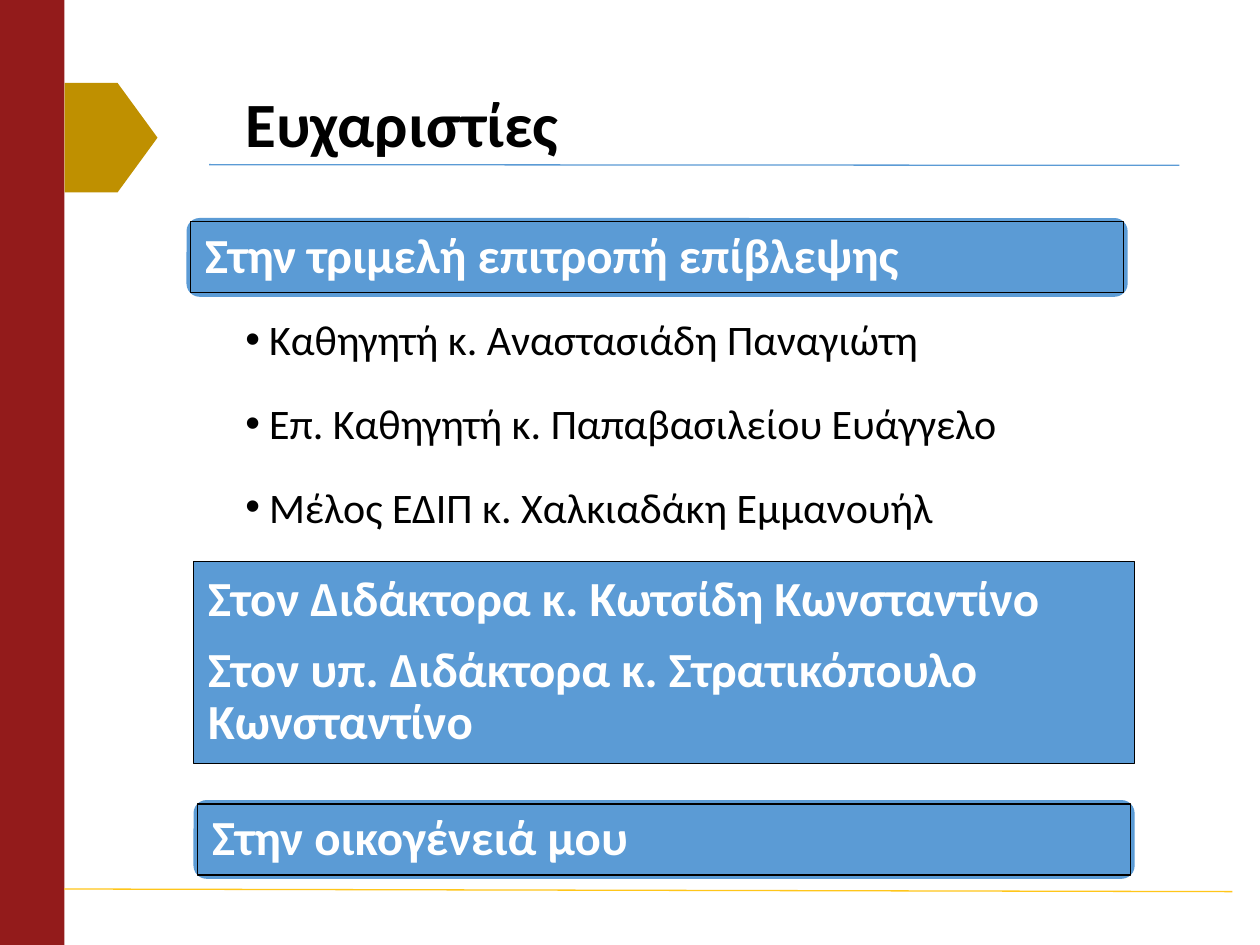
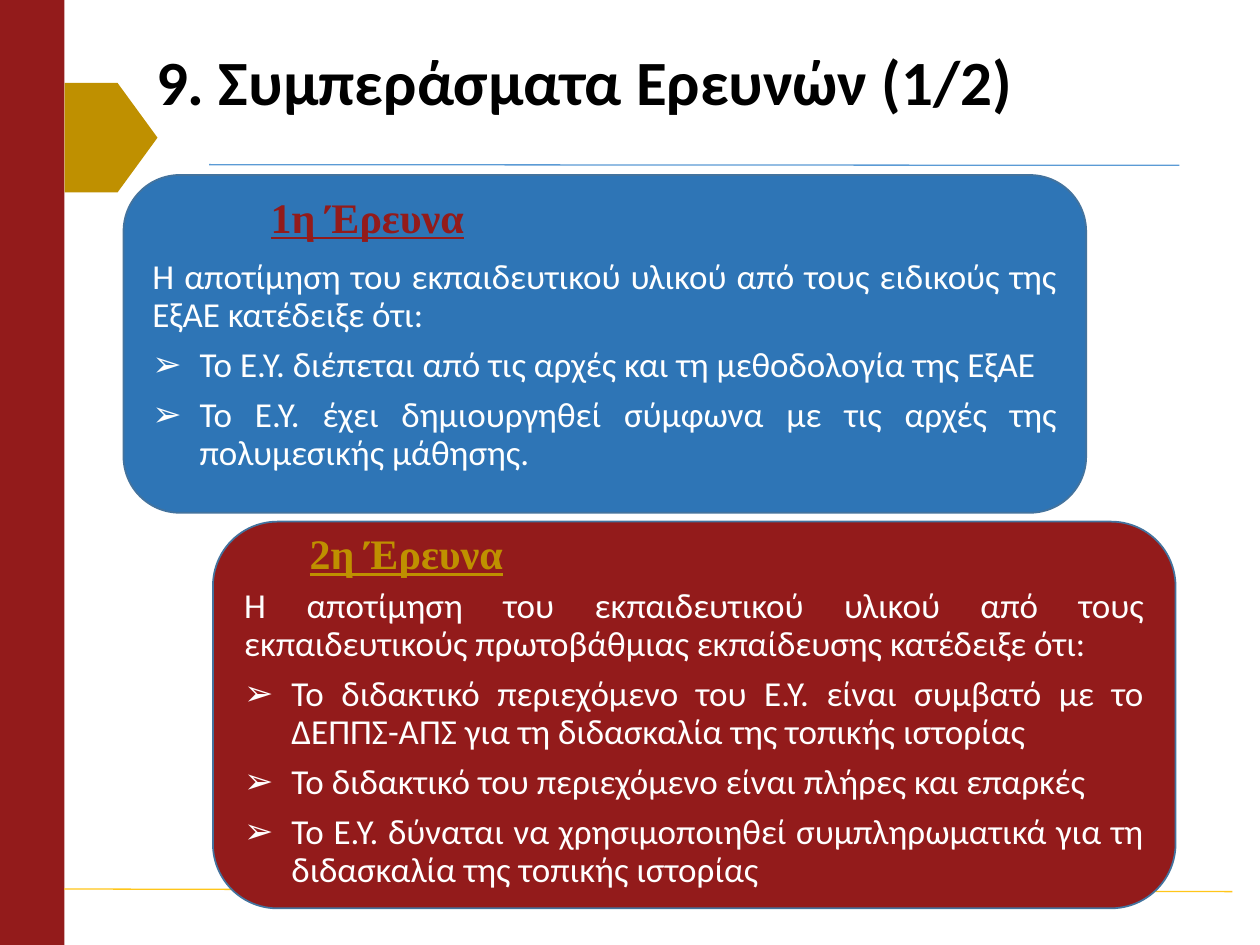
"""Build the acknowledgements slide and the research conclusions slide."""
import lxml.etree
import pptx
import pptx.dml.color
import pptx.enum.shapes
import pptx.enum.text
import pptx.oxml.ns
import pptx.util

Pt = pptx.util.Pt
rgb = pptx.dml.color.RGBColor.from_string
ALIGN = pptx.enum.text.PP_ALIGN
ANCHOR = pptx.enum.text.MSO_ANCHOR
SHAPE = pptx.enum.shapes.MSO_SHAPE
STRAIGHT = pptx.enum.shapes.MSO_CONNECTOR.STRAIGHT
qn = pptx.oxml.ns.qn

RED, GOLD, BLUE = "931B1B", "BF9000", "5B9BD5"
BLACK, WHITE = "000000", "FFFFFF"


def add_box(slide, kind, box, fill, line=None, line_width=0.75):
    shape = slide.shapes.add_shape(kind, *map(Pt, box))
    shape.shadow.inherit = False
    shape.fill.solid()
    shape.fill.fore_color.rgb = rgb(fill)
    if line:
        shape.line.color.rgb = rgb(line)
        shape.line.width = Pt(line_width)
    else:
        shape.line.fill.background()
    return shape


def add_text(shape, text, size, color=BLACK, font="Calibri", bold=False, underline=False,
             align=ALIGN.LEFT, anchor=ANCHOR.TOP, insets=(7.2, 3.6, 7.2, 3.6),
             spacing=0.9, before=0, after=0, bullet=None, indent=0, plain=0):
    frame = shape.text_frame
    frame.word_wrap = True
    frame.vertical_anchor = anchor
    frame.margin_left, frame.margin_top, frame.margin_right, frame.margin_bottom = map(Pt, insets)
    for index, line in enumerate(text.split("\n")):
        paragraph = frame.add_paragraph() if index else frame.paragraphs[0]
        paragraph.alignment = align
        paragraph.line_spacing = spacing
        paragraph.space_before = Pt(before)
        paragraph.space_after = Pt(after)
        run = paragraph.add_run()
        run.text = line
        run.font.name = font
        run.font.size = Pt(size)
        run.font.bold = bold
        run.font.underline = underline
        run.font.color.rgb = rgb(color)
        if bullet and index >= plain:
            properties = paragraph._p.get_or_add_pPr()
            properties.set("marL", str(Pt(indent)))
            properties.set("indent", str(-Pt(indent)))
            lxml.etree.SubElement(properties, qn("a:buFont")).set("typeface", "Arial")
            lxml.etree.SubElement(properties, qn("a:buChar")).set("char", bullet)


presentation = pptx.Presentation()
presentation.slide_width = Pt(720)
presentation.slide_height = Pt(540)

titles = [
    ("Ευχαριστίες", (133.2, 31.7, 554.4, 81.4)),
    ("9. Συμπεράσματα Ερευνών (1/2)", (82.1, 25.9, 612, 45.4)),
]
rules = [
    ((119.5, 94.1, 673.9, 94.5), BLUE),
    ((36.7, 508, 704.2, 509.5), "FFC61A"),
]

slides = []
for title, title_box in titles:
    slide = presentation.slides.add_slide(presentation.slide_layouts[6])
    add_box(slide, SHAPE.RECTANGLE, (0, 0, 36.9, 540), RED)
    for ends, color in rules:
        rule = slide.shapes.add_connector(STRAIGHT, *map(Pt, ends))
        rule.line.color.rgb = rgb(color)
        rule.line.width = Pt(0.75)
        lxml.etree.SubElement(rule._element.spPr, qn("a:effectLst"))
    pointer = add_box(slide, SHAPE.PENTAGON, (36.9, 47.4, 53.1, 62.6), GOLD)
    pointer.adjustments[0] = 0.43
    add_text(slide.shapes.add_textbox(*map(Pt, title_box)), title, 36, bold=True,
             anchor=ANCHOR.MIDDLE)
    slides.append(slide)
thanks, conclusions = slides

committee = thanks.shapes.add_textbox(*map(Pt, (133.2, 164.2, 521.3, 146.2)))
add_text(committee, "Καθηγητή κ. Αναστασιάδη Παναγιώτη\n"
         "Επ. Καθηγητή κ. Παπαβασιλείου Ευάγγελο\n"
         "Μέλος ΕΔΙΠ κ. Χαλκιαδάκη Εμμανουήλ",
         24, spacing=1.4, before=7.5, bullet="•", indent=13.5)

banners = [
    ("Στην τριμελή επιτροπή επίβλεψης", 106.6, 124.6, 45, True),
    ("Στον Διδάκτορα κ. Κωτσίδη Κωνσταντίνο\n"
     "Στον υπ. Διδάκτορα κ. Στρατικόπουλο Κωνσταντίνο", 110.6, 320.9, 115.4, False),
    ("Στην οικογένειά μου", 110.6, 457.2, 45, True),
]
for text, left, top, height, framed in banners:
    margin = 0
    if framed:
        add_box(thanks, SHAPE.ROUNDED_RECTANGLE, (left, top, 537.8, height), BLUE)
        margin = 2.2
    banner = add_box(thanks, SHAPE.RECTANGLE,
                     (left + margin, top + margin, 537.8 - 2 * margin, height - 2 * margin),
                     BLUE, BLACK)
    add_text(banner, text, 28, WHITE, bold=True, anchor=ANCHOR.MIDDLE,
             insets=(8.4, 8.4, 8.4, 8.4), after=9.8)

studies = [
    ("1η Έρευνα", RED, (93.6, 105.8, 232.6, 36),
     "Η αποτίμηση του εκπαιδευτικού υλικού από τους ειδικούς της ΕξΑΕ κατέδειξε ότι:\n"
     "Το Ε.Υ. διέπεται από τις αρχές και τη μεθοδολογία της ΕξΑΕ\n"
     "Το Ε.Υ. έχει δημιουργηθεί σύμφωνα με τις αρχές της πολυμεσικής μάθησης.",
     "2E75B6", (70.6, 100, 550.1, 193), 39),
    ("2η Έρευνα", GOLD, (115.9, 298.1, 232.6, 36),
     "Η αποτίμηση του εκπαιδευτικού υλικού από τους εκπαιδευτικούς πρωτοβάθμιας "
     "εκπαίδευσης κατέδειξε ότι:\n"
     "Το διδακτικό περιεχόμενο του Ε.Υ. είναι συμβατό με το ΔΕΠΠΣ-ΑΠΣ για τη διδασκαλία "
     "της τοπικής ιστορίας\n"
     "Το διδακτικό του περιεχόμενο είναι πλήρες και επαρκές\n"
     "Το Ε.Υ. δύναται να χρησιμοποιηθεί συμπληρωματικά για τη διδασκαλία της τοπικής ιστορίας",
     RED, (121.7, 298.1, 550.1, 221), 27.5),
]
for heading, heading_color, heading_box, findings, fill, card_box, top_inset in studies:
    card = add_box(conclusions, SHAPE.ROUNDED_RECTANGLE, card_box, fill, "43739E", 1)
    add_text(card, findings, 20, WHITE, align=ALIGN.JUSTIFY, insets=(7.2, top_inset, 7.2, 0),
             after=7, bullet="➢", indent=27, plain=1)
    add_text(conclusions.shapes.add_textbox(*map(Pt, heading_box)), heading, 24, heading_color,
             font="Times New Roman", bold=True, underline=True, align=ALIGN.CENTER, spacing=1.0)

presentation.save("out.pptx")
